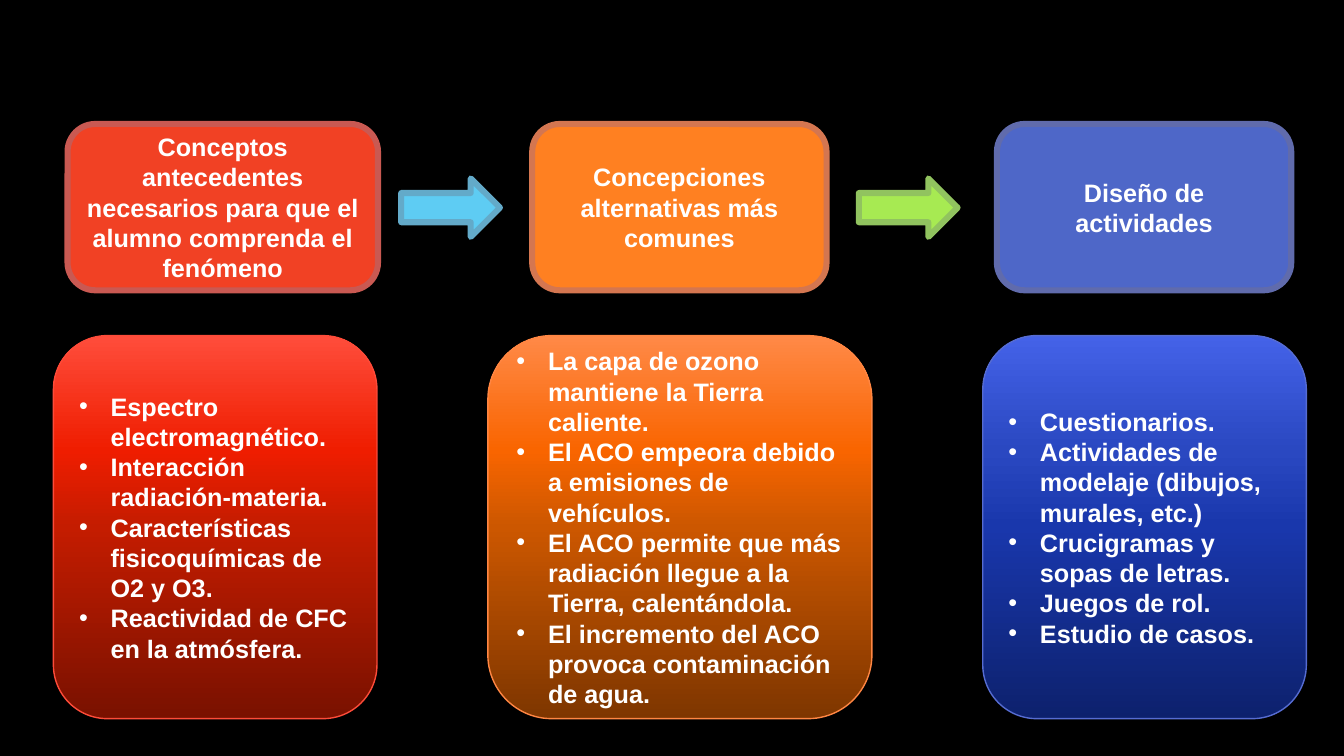
import pptx
import pptx.util
import pptx.dml.color
import pptx.enum.shapes
import pptx.enum.text
import pptx.oxml
import pptx.oxml.ns
import lxml.etree

Pt = pptx.util.Pt
KIND = pptx.enum.shapes.MSO_SHAPE
ALIGN = pptx.enum.text.PP_ALIGN

# Colours
HUES = {
    "back": "000000", "text": "FFFFFF",
    "red": "F14124", "red edge": "C95952", "red rim": "FD4B39",
    "orange": "FF8021", "orange edge": "D47650", "orange rim": "FF8643",
    "blue": "4E67C8", "blue edge": "606BAC", "blue rim": "566CD1",
    "sky": "5ECCF3", "sky edge": "63AAC9",
    "lime": "A7EA52", "lime edge": "91C35F",
}
STOPS = (0, 50, 70, 100)
FADES = {
    "red": ("791100", "C41C00", "EF1D00", "FF4D3B"),
    "orange": ("7E3600", "CC5700", "F96500", "FF8947"),
    "blue": ("0D216D", "1937AC", "2A48C1", "4462E8"),
}

# Content: hue, head (left, width), head text, list (left, width), list items
COLS = [
    ("red", (48.24, 221.76),
     "Conceptos antecedentes necesarios para que el alumno comprenda el fenómeno",
     (38.16, 231.12),
     ["Espectro electromagnético.",
      "Interacción radiación-materia.",
      "Características fisicoquímicas de O2 y O3.",
      "Reactividad de CFC en la atmósfera."]),
    ("orange", (380.16, 210.24),
     "Concepciones alternativas más comunes",
     (348.48, 274.32),
     ["La capa de ozono mantiene la Tierra caliente.",
      "El ACO empeora debido a emisiones de vehículos.",
      "El ACO permite que más radiación llegue a la Tierra, calentándola.",
      "El incremento del ACO provoca contaminación de agua."]),
    ("blue", (712.08, 210.24),
     "Diseño de actividades",
     (702, 231.12),
     ["Cuestionarios.",
      "Actividades de modelaje (dibujos, murales, etc.)",
      "Crucigramas y sopas de letras.",
      "Juegos de rol.",
      "Estudio de casos."]),
]
ARROWS = [("sky", 286.56), ("lime", 613.44)]

# Rows: top, height
HEAD = (88.56, 118.8)
LIST = (239.76, 273.6)
ARROW = (127.44, 41.76)
ARROW_W = 70.56
INDENT = 22.5


def tint(name):
    return pptx.dml.color.RGBColor.from_string(HUES[name])


def draw(kind, span, row, fill, edge, thick):
    shape = slide.shapes.add_shape(
        kind, Pt(span[0]), Pt(row[0]), Pt(span[1]), Pt(row[1]))
    shape.shadow.inherit = False
    shape.fill.solid()
    shape.fill.fore_color.rgb = tint(fill)
    shape.line.color.rgb = tint(edge)
    shape.line.width = Pt(thick)
    return shape


def fade(shape, hues):
    shape.fill.gradient()
    shape.fill.gradient_angle = 90
    stops = shape._element.spPr.find(".//" + pptx.oxml.ns.qn("a:gsLst"))
    for stop in list(stops):
        stops.remove(stop)
    for place, hue in zip(STOPS, hues):
        stop = lxml.etree.SubElement(
            stops, pptx.oxml.ns.qn("a:gs"), pos=str(place * 1000))
        lxml.etree.SubElement(stop, pptx.oxml.ns.qn("a:srgbClr"), val=hue)


def write(shape, lines, size=18, bold=True, align=ALIGN.CENTER, bullet=None):
    frame = shape.text_frame
    frame.word_wrap = True
    frame.vertical_anchor = pptx.enum.text.MSO_ANCHOR.MIDDLE
    for num, line in enumerate(lines):
        para = frame.add_paragraph() if num else frame.paragraphs[0]
        para.alignment = align
        if bullet:
            props = para._p.get_or_add_pPr()
            props.set("marL", str(Pt(INDENT)))
            props.set("indent", str(-Pt(INDENT)))
            lxml.etree.SubElement(
                props, pptx.oxml.ns.qn("a:buFont"), typeface="Arial")
            lxml.etree.SubElement(
                props, pptx.oxml.ns.qn("a:buChar"), char=bullet)
        run = para.add_run()
        run.text = line
        run.font.name = "Arial"
        run.font.size = Pt(size)
        run.font.bold = bold
        run.font.color.rgb = tint("text")


# Slide
deck = pptx.Presentation()
deck.slide_width, deck.slide_height = Pt(960), Pt(540)
slide = deck.slides.add_slide(deck.slide_layouts[6])
slide.background.fill.solid()
slide.background.fill.fore_color.rgb = tint("back")

# Heads
for hue, span, title, _, _ in COLS:
    box = draw(KIND.ROUNDED_RECTANGLE, span, HEAD, hue, hue + " edge", 4.33)
    write(box, [title])

# Arrows
for hue, left in ARROWS:
    draw(KIND.RIGHT_ARROW, (left, ARROW_W), ARROW, hue, hue + " edge", 4.33)

# Lists
for hue, _, _, span, items in COLS:
    box = draw(KIND.ROUNDED_RECTANGLE, span, LIST, hue, hue + " rim", 1)
    fade(box, FADES[hue])
    write(box, items, align=ALIGN.LEFT, bullet="•")

deck.save("out.pptx")
